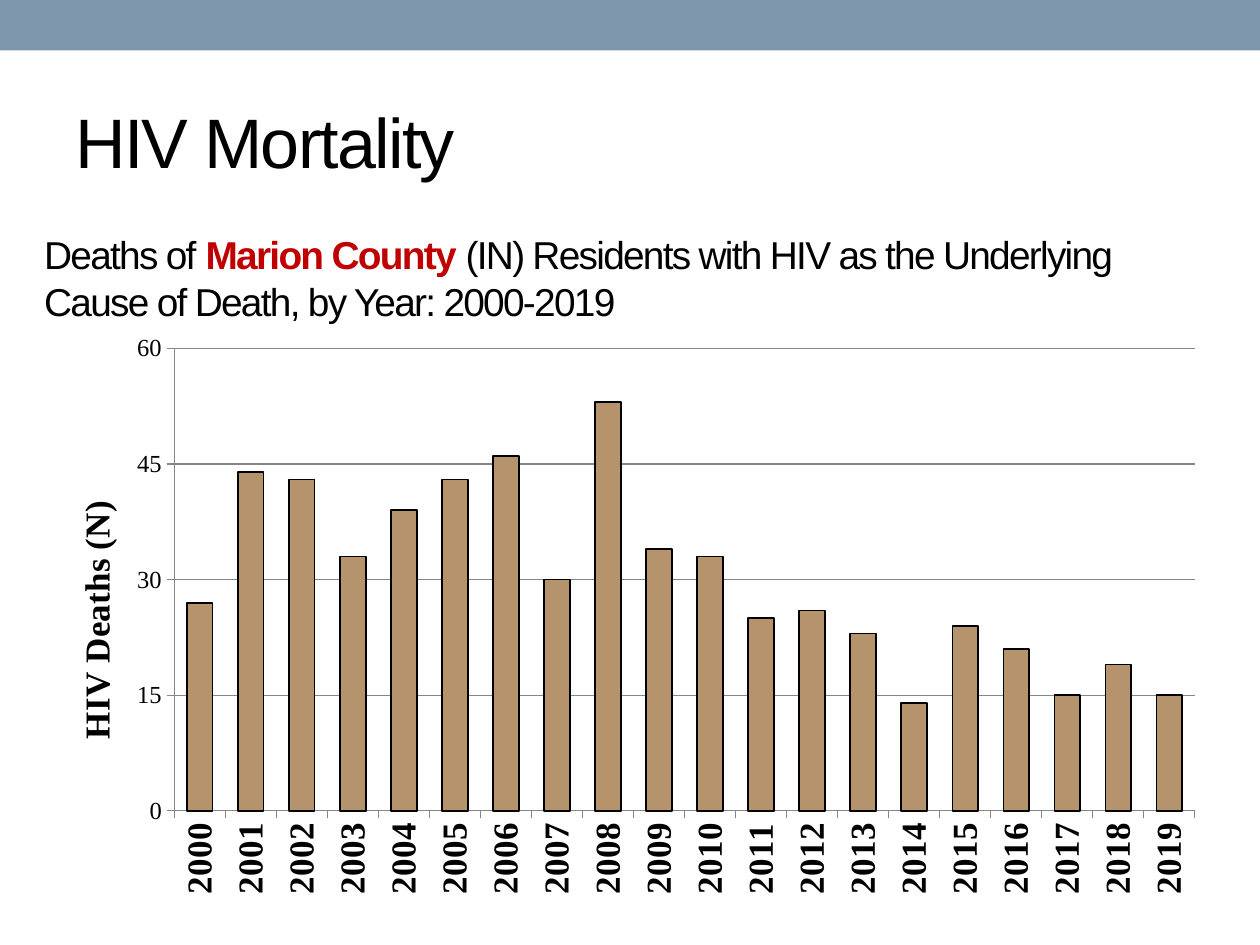
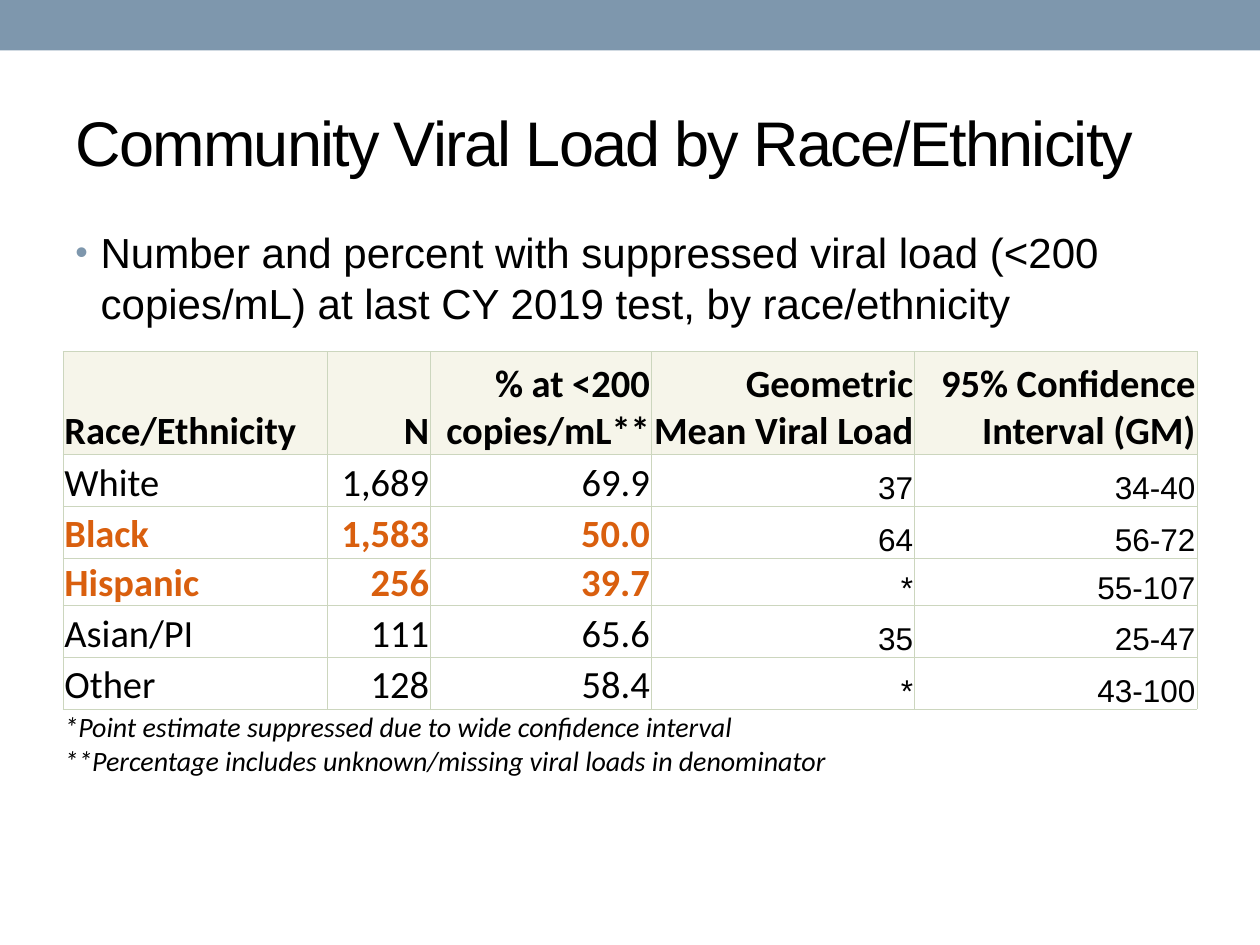
from dataclasses import dataclass

from lxml import etree
from pptx import Presentation
from pptx.chart.data import CategoryChartData
from pptx.dml.color import RGBColor
from pptx.enum.chart import XL_CHART_TYPE as ChartType, XL_TICK_MARK as TickMark
from pptx.enum.shapes import MSO_SHAPE as ShapeKind
from pptx.enum.text import MSO_ANCHOR as Anchor, PP_ALIGN as Align
from pptx.oxml import parse_xml
from pptx.oxml.ns import nsdecls, qn
from pptx.util import Cm, Pt

# Shared look
BLACK, WHITE, BAND, RED = "000000", "FFFFFF", "7E97AD", "C00000"
BAR, GRID_LINE = "B4936D", "868686"
HEADER_FILL, CELL_BORDER, HIGHLIGHT = "F6F5EA", "CCD6BE", "D95F0E"
SANS, TABLE_FONT, CHART_FONT = "Arial", "Calibri", "Times New Roman"
NO_TABLE_STYLE = "{2D5ABB26-0587-4C30-8999-92F81FD0307C}"
SLIDE_WIDTH, SLIDE_HEIGHT = 25.4, 19.05


@dataclass(frozen=True)
class Box:
    left: float
    top: float
    width: float
    height: float

    def lengths(self) -> tuple:
        return Cm(self.left), Cm(self.top), Cm(self.width), Cm(self.height)


@dataclass(frozen=True)
class Style:
    size: float
    font: str = SANS
    color: str = BLACK
    bold: bool = False
    italic: bool = False
    spacing: int = 0  # hundredths of a point


@dataclass(frozen=True)
class Row:
    height: float
    texts: tuple
    highlighted: bool = False


# Slide data
DEATHS = [27, 44, 43, 33, 39, 43, 46, 30, 53, 34,
          33, 25, 26, 23, 14, 24, 21, 15, 19, 15]
FIRST_YEAR = 2000

COLUMN_WIDTHS = [5.33, 2.08, 4.45, 5.31, 5.69]
CALIBRI_COLUMNS = 3
ROWS = [
    Row(2.08, ("Race/Ethnicity", "N", "% at <200 copies/mL**",
               "Geometric Mean Viral Load", "95% Confidence Interval (GM)")),
    Row(1.04, ("White", "1,689", "69.9", "37", "34-40")),
    Row(1.04, ("Black", "1,583", "50.0", "64", "56-72"), True),
    Row(0.84, ("Hispanic", "256", "39.7", "*", "55-107"), True),
    Row(1.04, ("Asian/PI", "111", "65.6", "35", "25-47")),
    Row(1.04, ("Other", "128", "58.4", "*", "43-100")),
]
NOTES = ["*Point estimate suppressed due to wide confidence interval",
         "**Percentage includes unknown/missing viral loads in denominator"]
NOTES_HEIGHT = 1.04


def rgb(color: str) -> RGBColor:
    return RGBColor.from_string(color)


def style_font(font, style: Style) -> None:
    font.name, font.size = style.font, Pt(style.size)
    font.bold, font.italic = style.bold, style.italic
    font.color.rgb = rgb(style.color)


def add_run(paragraph, text: str, style: Style) -> None:
    run = paragraph.add_run()
    run.text = text
    style_font(run.font, style)
    if style.spacing:
        run._r.get_or_add_rPr().set("spc", str(style.spacing))


def add_text(slide, box: Box, runs: list, anchor=Anchor.MIDDLE):
    frame = slide.shapes.add_textbox(*box.lengths()).text_frame
    frame.word_wrap = True
    frame.vertical_anchor = anchor
    for text, style in runs:
        add_run(frame.paragraphs[0], text, style)
    return frame.paragraphs[0]


def add_titled_slide(presentation, title: str, size: float, width: float):
    slide = presentation.slides.add_slide(presentation.slide_layouts[6])
    band = slide.shapes.add_shape(
        ShapeKind.RECTANGLE, *Box(0, 0, SLIDE_WIDTH, 1.02).lengths())
    band.shadow.inherit = False
    band.fill.solid()
    band.fill.fore_color.rgb = rgb(BAND)
    band.line.fill.background()
    add_text(slide, Box(1.27, 1.47, width, 2.74), [(title, Style(size, spacing=-100))])
    return slide


# Chart
def set_layout(parent, index: int, **values: float) -> None:
    """Give a chart part a manual layout, as fractions of the chart."""
    for old in parent.findall(qn("c:layout")):
        parent.remove(old)
    layout = etree.Element(qn("c:layout"))
    manual = etree.SubElement(layout, qn("c:manualLayout"))
    if "w" in values:
        etree.SubElement(manual, qn("c:layoutTarget")).set("val", "inner")
    for side in "xy":
        etree.SubElement(manual, qn(f"c:{side}Mode")).set("val", "edge")
    for name, value in values.items():
        etree.SubElement(manual, qn(f"c:{name}")).set("val", str(value))
    parent.insert(index, layout)


def set_line(line, color: str, width: float) -> None:
    line.color.rgb = rgb(color)
    line.width = Pt(width)


def turn_upright(element) -> None:
    element.find(".//" + qn("a:bodyPr")).set("rot", "-5400000")


def add_deaths_chart(slide, box: Box) -> None:
    data = CategoryChartData(number_format="#,##0")
    data.categories = [str(FIRST_YEAR + offset) for offset in range(len(DEATHS))]
    data.add_series("Series 1", DEATHS)
    chart = slide.shapes.add_chart(
        ChartType.COLUMN_STACKED, *box.lengths(), data).chart
    chart.has_legend = chart.has_title = False
    style_font(chart.font, Style(14, CHART_FONT))
    label_style = Style(20, CHART_FONT, bold=True)

    # Bars
    plot = chart.plots[0]
    plot.gap_width, plot.overlap, plot.vary_by_categories = 100, 100, False
    bars = plot.series[0].format
    bars.fill.solid()
    bars.fill.fore_color.rgb = rgb(BAR)
    set_line(bars.line, BLACK, 1)

    # Axes
    years, counts = chart.category_axis, chart.value_axis
    for axis in (years, counts):
        axis.major_tick_mark = TickMark.OUTSIDE
        axis.minor_tick_mark = TickMark.NONE
        set_line(axis.format.line, GRID_LINE, 0.75)
    style_font(years.tick_labels.font, label_style)
    turn_upright(years._element)
    counts.minimum_scale, counts.maximum_scale, counts.major_unit = 0, 60, 15
    counts.tick_labels.number_format = "#,##0"
    counts.tick_labels.number_format_is_linked = False
    counts.has_major_gridlines = True
    set_line(counts.major_gridlines.format.line, GRID_LINE, 0.75)
    title = counts.axis_title
    add_run(title.text_frame.paragraphs[0], "HIV Deaths (N)", label_style)
    turn_upright(title._element)

    # Placement and border
    chart_space = chart._chartSpace
    set_layout(title._element, 1, x=0.03, y=0.29)
    set_layout(chart_space.find(".//" + qn("c:plotArea")), 0,
               x=0.12, y=0.04, w=0.86, h=0.79)
    chart_space.find(qn("c:chart")).addnext(parse_xml(
        f'<c:spPr {nsdecls("c", "a")}><a:noFill/><a:ln w="{Pt(0.25)}"><a:solidFill>'
        f'<a:srgbClr val="{WHITE}"/></a:solidFill></a:ln></c:spPr>'))


# Table
def set_borders(cell, sides: str) -> None:
    properties = cell._tc.get_or_add_tcPr()
    for index, side in enumerate("LRTB"):
        paint = (f'<a:solidFill><a:srgbClr val="{CELL_BORDER}"/></a:solidFill>'
                 if side in sides else "<a:noFill/>")
        properties.insert(index, parse_xml(
            f'<a:ln{side} {nsdecls("a")} w="{Pt(0.5)}">{paint}</a:ln{side}>'))


def fill_cell(cell, lines: list, style: Style, align=Align.LEFT,
              fill: str = "", borders: str = "LRTB") -> None:
    cell.margin_left = cell.margin_right = cell.margin_top = Cm(0.03)
    cell.margin_bottom = 0
    cell.vertical_anchor = Anchor.BOTTOM
    if fill:
        cell.fill.solid()
        cell.fill.fore_color.rgb = rgb(fill)
    else:
        cell.fill.background()
    set_borders(cell, borders)
    frame = cell.text_frame
    for index, line in enumerate(lines):
        paragraph = frame.add_paragraph() if index else frame.paragraphs[0]
        paragraph.alignment = align
        add_run(paragraph, line, style)


def cell_style(row: Row, is_header: bool, column: int) -> Style:
    if not is_header and column >= CALIBRI_COLUMNS:
        return Style(18)
    color = HIGHLIGHT if row.highlighted else BLACK
    return Style(22, TABLE_FONT, color, bold=is_header or row.highlighted)


def add_viral_load_table(slide, left: float, top: float) -> None:
    heights = [row.height for row in ROWS] + [NOTES_HEIGHT]
    box = Box(left, top, sum(COLUMN_WIDTHS), sum(heights))
    table = slide.shapes.add_table(
        len(heights), len(COLUMN_WIDTHS), *box.lengths()).table
    table.first_row = table.horz_banding = False
    table._tbl.tblPr.find(qn("a:tableStyleId")).text = NO_TABLE_STYLE
    for column, width in zip(table.columns, COLUMN_WIDTHS):
        column.width = Cm(width)
    for table_row, height in zip(table.rows, heights):
        table_row.height = Cm(height)
    for row_index, row in enumerate(ROWS):
        is_header = row_index == 0
        for column_index, text in enumerate(row.texts):
            fill_cell(table.cell(row_index, column_index), [text],
                      cell_style(row, is_header, column_index),
                      Align.RIGHT if column_index else Align.LEFT,
                      HEADER_FILL if is_header else "")

    # Notes across the full width
    last = len(ROWS)
    notes = table.cell(last, 0)
    notes.merge(table.cell(last, len(COLUMN_WIDTHS) - 1))
    note_style = Style(16, TABLE_FONT, italic=True)
    fill_cell(notes, NOTES, note_style, borders="T")
    for column_index in range(1, len(COLUMN_WIDTHS)):
        fill_cell(table.cell(last, column_index), [], note_style, borders="T")


def add_bullet(paragraph, indent: float) -> None:
    paragraph.space_before = paragraph.space_after = Pt(3)
    properties = paragraph._p.get_or_add_pPr()
    properties.set("marL", str(Cm(indent)))
    properties.set("indent", str(-Cm(indent)))
    color = etree.SubElement(properties, qn("a:buClr"))
    etree.SubElement(color, qn("a:srgbClr")).set("val", BAND)
    etree.SubElement(properties, qn("a:buSzPct")).set("val", "85000")
    etree.SubElement(properties, qn("a:buFont")).set("typeface", SANS)
    etree.SubElement(properties, qn("a:buChar")).set("char", "•")


# Slides
def build_mortality(presentation) -> None:
    slide = add_titled_slide(presentation, "HIV Mortality", 40, 22.86)
    plain = Style(22.2, spacing=-100)
    add_text(slide, Box(0.64, 4.65, 23.93, 1.9), [
        ("Deaths of ", plain),
        ("Marion County", Style(22.2, color=RED, bold=True, spacing=-100)),
        (" (IN) Residents with HIV as the Underlying Cause of Death, "
         "by Year: 2000-2019", plain)])
    add_deaths_chart(slide, Box(0.64, 6.55, 23.93, 11.81))


def build_viral_load(presentation) -> None:
    slide = add_titled_slide(
        presentation, "Community Viral Load by Race/Ethnicity", 36, 23.93)
    paragraph = add_text(slide, Box(1.27, 4.45, 22.86, 2.97), [
        ("Number and percent with suppressed viral load (<200 copies/mL) "
         "at last CY 2019 test, by race/ethnicity", Style(24))], Anchor.TOP)
    add_bullet(paragraph, 0.51)
    add_viral_load_table(slide, 1.27, 7.09)


def main() -> None:
    presentation = Presentation()
    presentation.slide_width = Cm(SLIDE_WIDTH)
    presentation.slide_height = Cm(SLIDE_HEIGHT)
    build_mortality(presentation)
    build_viral_load(presentation)
    presentation.save("out.pptx")


if __name__ == "__main__":
    main()
